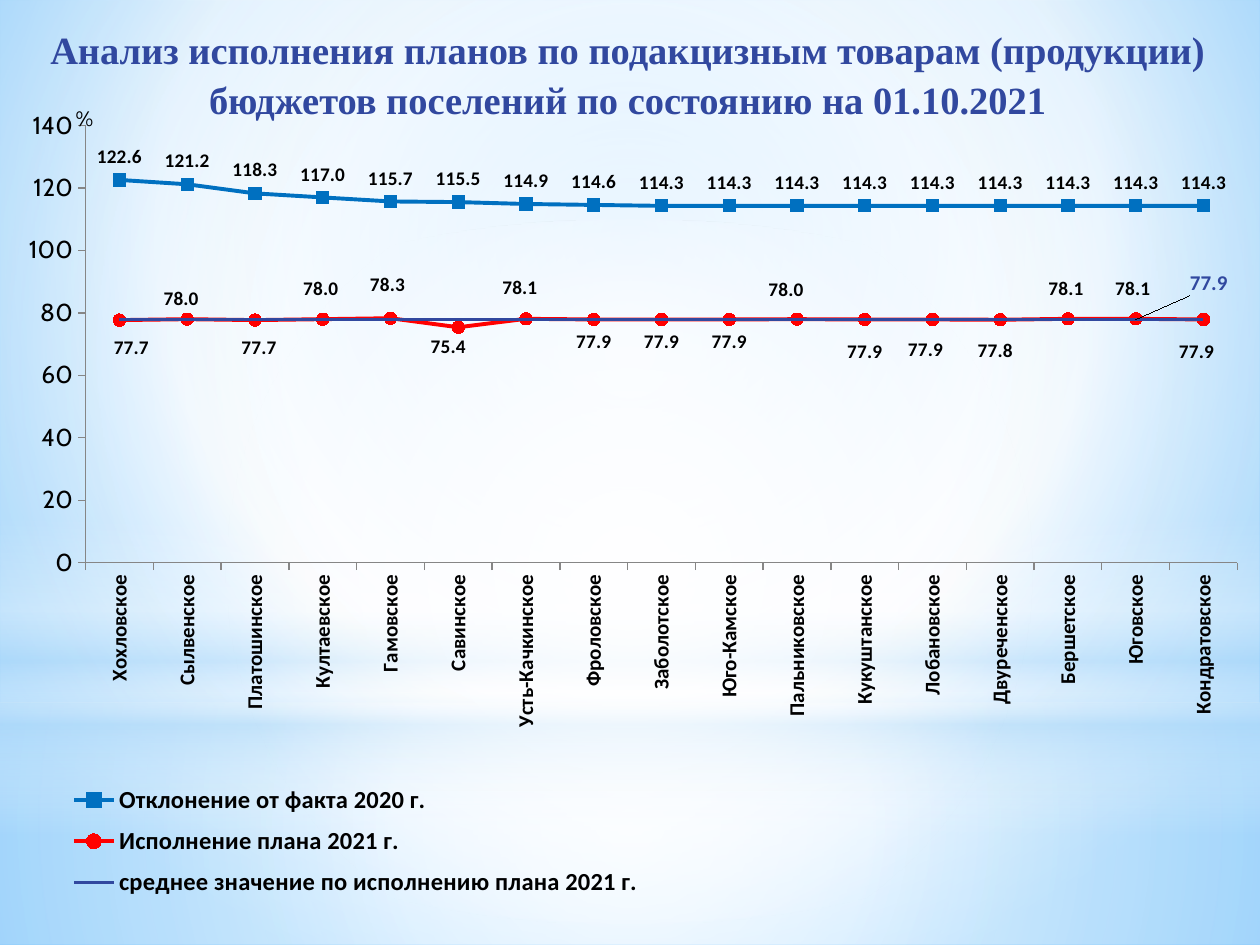
from dataclasses import dataclass

from pptx import Presentation, util as u
from pptx.chart.data import CategoryChartData
from pptx.dml.color import RGBColor
from pptx.enum import chart as ch, shapes, text
from pptx.oxml import parse_xml
from pptx.oxml.ns import nsdecls

PX = 914400 / 126
SLIDE_W, SLIDE_H = 1260, 945


@dataclass(frozen=True)
class Theme:
    navy: str = "31489F"
    blue: str = "0070C0"
    red: str = "FF0000"
    black: str = "000000"
    axis: str = "868686"
    title_font: str = "Times New Roman"
    chart_font: str = "Cabin"
    label_font: str = "Calibri"
    title_size: int = 22
    base_size: int = 18
    legend_size: int = 14
    axis_size: int = 12
    value_size: int = 11
    line_width: float = 2.25


T = Theme()
VALUE_FORMAT = "#,##0.0"

SETTLEMENTS = [
    "Хохловское", "Сылвенское", "Платошинское", "Култаевское", "Гамовское", "Савинское",
    "Усть-Качкинское", "Фроловское", "Заболотское", "Юго-Камское", "Пальниковское",
    "Кукуштанское", "Лобановское", "Двуреченское", "Бершетское", "Юговское", "Кондратовское",
]
DEVIATION = [122.6, 121.2, 118.3, 117, 115.7, 115.5, 114.9, 114.6] + [114.3] * 9
EXECUTION = [77.7, 78, 77.7, 78, 78.3, 75.4, 78.1, 77.9, 77.9, 77.9, 78,
             77.9, 77.9, 77.8, 78.1, 78.1, 77.9]
AVERAGE = [77.9] * len(SETTLEMENTS)

# Label shifts in px from the spot below the point
EXECUTION_SHIFTS = {
    0: (12, 5), 1: (-6, -43), 2: (4, 5), 3: (-2, -53), 4: (-3, -56), 5: (-10, -3),
    6: (-6, -54), 10: (-11, -52), 11: (0, 10), 12: (-7, 8), 13: (-5, 8),
    14: (-2, -53), 15: (-3, -53), 16: (-7, 10),
}
AVERAGE_SHIFTS = {15: (73, -54)}


def px(*lengths):
    return [u.Emu(round(n * PX)) for n in lengths]


def style_font(font, size, color=T.black, name=T.label_font, bold=True):
    font.size, font.name, font.bold = u.Pt(size), name, bold
    font.color.rgb = RGBColor.from_string(color)


def gradient(stops, focus=None):
    """Circular gradient towards the focus rectangle, or top to bottom without one."""
    marks = "".join(
        f'<a:gs pos="{pos * 1000}"><a:srgbClr val="{color}"><a:alpha val="{alpha * 1000}"/>'
        "</a:srgbClr></a:gs>" for pos, color, alpha in stops)
    if focus:
        sides = " ".join(f'{side}="{n * 1000}"' for side, n in zip("ltrb", focus))
        course = f'<a:path path="circle"><a:fillToRect {sides}/></a:path>'
    else:
        course = '<a:lin ang="5400000" scaled="0"/>'
    return parse_xml(f'<a:gradFill {nsdecls("a")} rotWithShape="1">'
                     f"<a:gsLst>{marks}</a:gsLst>{course}</a:gradFill>")


def put_gradient(holder, fill, grad):
    fill.gradient()
    old = holder.xpath(".//a:gradFill")[0]
    old.getparent().replace(old, grad)


def build_backdrop(slide):
    put_gradient(slide.element, slide.background.fill, gradient(
        [(0, "9ED5FF", 100), (60, "FFFFFF", 100), (100, "5BB9FF", 100)], (20, 10, 20, 60)))
    rect, oval = shapes.MSO_SHAPE.RECTANGLE, shapes.MSO_SHAPE.OVAL
    centre, pale = (50, 50, 50, 50), "B4DCFA"
    layers = [
        (rect, (0, 703, SLIDE_W, 242), centre,
         [(0, "FFFFFF", 91), (37, "FFFFFF", 76), (100, pale, 79)]),
        (rect, (0, 0, SLIDE_W, 703), centre,
         [(0, "FFFFFF", 89), (48, "FFFFFF", 62), (100, pale, 79)]),
        (rect, (0, 519, SLIDE_W, 315), None,
         [(0, "FFFFFF", 0), (29, "FFFFFF", 30), (45, pale, 40),
          (55, "FFFFFF", 26), (65, pale, 60), (100, "FFFFFF", 0)]),
        (oval, (0, 220, SLIDE_W, 703), centre, [(0, "FFFFFF", 100), (56, "FFFFFF", 0)]),
    ]
    for kind, box, focus, stops in layers:
        layer = slide.shapes.add_shape(kind, *px(*box))
        layer.shadow.inherit = False
        layer.line.fill.background()
        put_gradient(layer.element, layer.fill, gradient(stops, focus))
        slide.shapes.title.element.addprevious(layer.element)  # keep behind the title


def build_title(slide, box):
    title = slide.shapes.title
    title.left, title.top, title.width, title.height = px(*box)
    frame = title.text_frame
    frame.text = ("Анализ исполнения планов по подакцизным товарам (продукции) "
                  "бюджетов поселений по состоянию на 01.10.2021")
    frame.word_wrap = True
    frame.auto_size = text.MSO_AUTO_SIZE.NONE
    frame.vertical_anchor = text.MSO_ANCHOR.TOP
    heading = frame.paragraphs[0]
    heading.alignment = text.PP_ALIGN.CENTER
    heading.line_spacing = 1.08
    style_font(heading.runs[0].font, T.title_size, T.navy, T.title_font)


def layout_xml(x, y, w=None, h=None, edge=True, inner=False):
    parts = '<c:layoutTarget val="inner"/>' if inner else ""
    if edge:
        parts += '<c:xMode val="edge"/><c:yMode val="edge"/>'
    parts += "".join(f'<c:{tag} val="{n:.4f}"/>'
                     for tag, n in zip("xywh", (x, y, w, h)) if n is not None)
    return parse_xml(f'<c:layout {nsdecls("c")}><c:manualLayout>{parts}'
                     "</c:manualLayout></c:layout>")


def set_layout(parent, layout, after=None):
    for old in parent.xpath("./c:layout"):
        parent.remove(old)
    if after:
        parent.xpath(f"./c:{after}")[0].addnext(layout)
    else:
        parent.insert(0, layout)


def shift_labels(series, group, shifts, box, size, color, leaders):
    """Move single value labels away from their place below the point."""
    for index, (dx, dy) in shifts.items():
        label = series.points[index].data_label
        style_font(label.font, size, color)
        label.position = ch.XL_LABEL_POSITION.BELOW
        node = group.xpath(f"./c:dLbl[c:idx/@val='{index}']")[0]
        layout = layout_xml(dx / box[2], dy / box[3], edge=False)
        set_layout(node, layout, "idx")
        layout.addnext(parse_xml(f'<c:numFmt {nsdecls("c")} formatCode="{VALUE_FORMAT}" '
                                 'sourceLinked="0"/>'))
    for old in group.xpath("./c:showLeaderLines"):
        group.remove(old)
    group.append(parse_xml(f'<c:showLeaderLines {nsdecls("c")} val="{int(leaders)}"/>'))


def style_series(chart, box):
    pos, mark = ch.XL_LABEL_POSITION, ch.XL_MARKER_STYLE
    looks = [
        (T.blue, mark.SQUARE, pos.ABOVE, {}, T.value_size, T.black),
        (T.red, mark.CIRCLE, pos.BELOW, EXECUTION_SHIFTS, T.value_size, T.black),
        (T.navy, mark.NONE, None, AVERAGE_SHIFTS, T.axis_size, T.navy),
    ]
    for series, (color, marker, place, shifts, size, ink) in zip(chart.plots[0].series, looks):
        rgb = RGBColor.from_string(color)
        series.smooth = False
        series.format.line.color.rgb = rgb
        series.format.line.width = u.Pt(T.line_width)
        series.marker.style = marker
        if marker != mark.NONE:
            series.marker.size = 7
            series.marker.format.fill.solid()
            series.marker.format.fill.fore_color.rgb = rgb
            series.marker.format.line.color.rgb = rgb
        labels = series.data_labels
        labels.show_value = place is not None
        labels.number_format, labels.number_format_is_linked = VALUE_FORMAT, False
        style_font(labels.font, size, ink)
        if place is not None:
            labels.position = place
        if shifts:
            group = chart.element.xpath(".//c:ser/c:dLbls")[-1] if place is None else \
                chart.element.xpath(".//c:ser[2]/c:dLbls")[0]
            shift_labels(series, group, shifts, box, size, ink, leaders=place is None)


def style_axes(chart):
    names, percent = chart.category_axis, chart.value_axis
    for axis in (names, percent):
        axis.has_major_gridlines = False
        axis.major_tick_mark = ch.XL_TICK_MARK.OUTSIDE
        axis.minor_tick_mark = ch.XL_TICK_MARK.NONE
        axis.format.line.color.rgb = RGBColor.from_string(T.axis)
    style_font(names.tick_labels.font, T.axis_size)
    chart.element.xpath(".//c:catAx/c:txPr/a:bodyPr")[0].set("rot", "-5400000")

    percent.minimum_scale, percent.maximum_scale, percent.major_unit = 0, 140, 20
    percent.tick_labels.number_format = "#,##0"
    percent.tick_labels.number_format_is_linked = False
    style_font(percent.tick_labels.font, T.legend_size, name=T.chart_font, bold=False)
    caption = percent.axis_title.text_frame
    caption.text = "%"
    style_font(caption.paragraphs[0].runs[0].font, T.axis_size, name=T.chart_font, bold=False)
    title_node = chart.element.xpath(".//c:valAx/c:title")[0]
    title_node.xpath(".//a:bodyPr")[0].set("rot", "0")
    set_layout(title_node, layout_xml(0.06, 0.01), "tx")


def build_chart(slide, box):
    data = CategoryChartData(number_format=VALUE_FORMAT)
    data.categories = SETTLEMENTS
    data.add_series("Отклонение от факта 2020 г.", DEVIATION)
    data.add_series("Исполнение плана 2021 г.", EXECUTION)
    data.add_series("среднее значение по исполнению плана 2021 г.", AVERAGE)
    chart = slide.shapes.add_chart(ch.XL_CHART_TYPE.LINE_MARKERS, *px(*box), data).chart
    chart.has_title = False
    style_font(chart.font, T.base_size, name=T.chart_font, bold=False)
    chart.plots[0].vary_by_categories = False
    style_axes(chart)
    style_series(chart, box)
    set_layout(chart.element.xpath(".//c:plotArea")[0],
               layout_xml(0.071, 0.04, 0.912, 0.519, inner=True))

    # Legend stacked below the plot, at the left
    chart.has_legend = True
    chart.legend.position = ch.XL_LEGEND_POSITION.BOTTOM
    chart.legend.include_in_layout = False
    style_font(chart.legend.font, T.legend_size)
    set_layout(chart.element.xpath(".//c:legend")[0],
               layout_xml(0.05, 0.81, 0.47, 0.16), "legendPos")


def main():
    deck = Presentation()
    deck.slide_width, deck.slide_height = px(SLIDE_W, SLIDE_H)
    slide = deck.slides.add_slide(deck.slide_layouts[5])
    build_backdrop(slide)
    build_title(slide, (0, 16, 1255, 79))
    build_chart(slide, (-4, 92, 1263, 842))
    deck.save("out.pptx")


if __name__ == "__main__":
    main()
